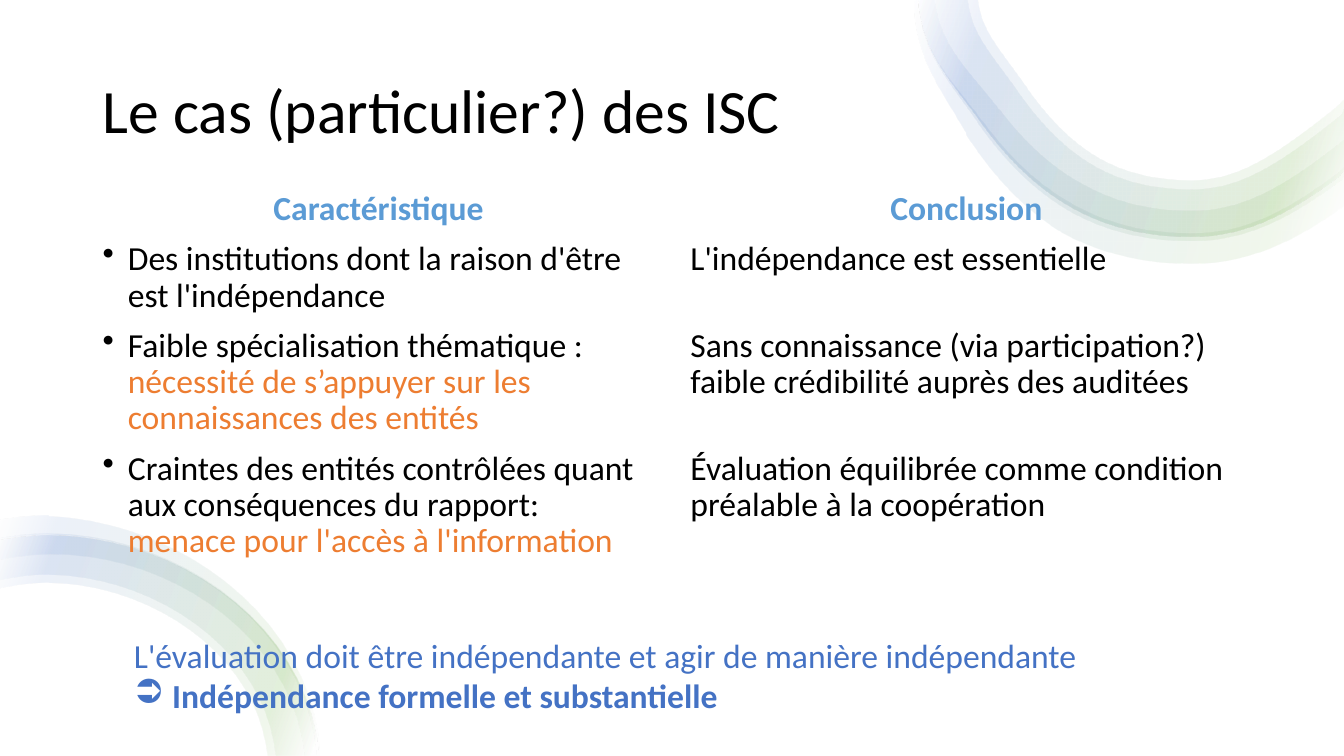
"""Build the slide on the particular case of the ISC, with two translucent ribbons."""
import math
import pptx
import pptx.util
import pptx.dml.color
import pptx.enum.text
import pptx.oxml
import pptx.oxml.ns
from dataclasses import dataclass

Inches = pptx.util.Inches
Pt = pptx.util.Pt
Align = pptx.enum.text.PP_ALIGN
Anchor = pptx.enum.text.MSO_ANCHOR


@dataclass(frozen=True)
class Theme:
    font: str = "Calibri"
    paper: str = "FFFFFF"
    ink: str = "000000"
    heading: str = "5B9BD5"
    accent: str = "ED7D31"
    message: str = "4472C4"
    ribbon: tuple = ((2, "FFFFFF"), (16, "70AD47"), (85, "4472C4"), (100, "FFFFFF"))
    ribbon_opacity: int = 10
    ribbon_angle: int = 200
    title_size: int = 44
    text_size: int = 24


theme = Theme()
width, height = 13.33, 7.5
deck = pptx.Presentation()
deck.slide_width, deck.slide_height = Inches(width), Inches(height)
slide = deck.slides.add_slide(deck.slide_layouts[6])
slide.background.fill.solid()
slide.background.fill.fore_color.rgb = pptx.dml.color.RGBColor.from_string(theme.paper)


def add_ribbon(start, curves, outer, inner, samples=20):
    """Draw a band between two offsets of a Bézier chain, each easing from end to full value."""
    steps = []
    for curve in curves:
        knots = [start, curve[:2], curve[2:4], curve[4:]]
        for i in range(samples):
            t = i / (samples - 1)
            place = (((1 - t) ** 3, 3 * t * (1 - t) ** 2, 3 * t * t * (1 - t), t ** 3))
            slope = ((1 - t) ** 2, 2 * t * (1 - t), t * t)
            x, y = (sum(w * k[axis] for w, k in zip(place, knots)) for axis in (0, 1))
            dx, dy = (sum(w * (b[axis] - a[axis]) for w, a, b in zip(slope, knots, knots[1:]))
                      for axis in (0, 1))
            steps.append((x, y, dx / math.hypot(dx, dy), dy / math.hypot(dx, dy)))
        start = knots[-1]
    edges = []
    for first, full in (outer, inner):
        edge = []
        for index, (x, y, dx, dy) in enumerate(steps):
            offset = first + (full - first) * min(1, 2 * index / len(steps))
            edge.append((Inches(min(max(x + dy * offset, 0), width)),
                         Inches(min(max(y - dx * offset, 0), height))))
        edges.append(edge)
    points = edges[0] + edges[1][::-1]
    outline = slide.shapes.build_freeform(*points[0])
    outline.add_line_segments(points[1:], close=True)
    band = outline.convert_to_shape()
    band.shadow.inherit = False
    band.line.fill.background()
    band.fill.background()
    stops = "".join(
        f'<a:gs pos="{place * 1000}"><a:srgbClr val="{color}">'
        f'<a:alpha val="{theme.ribbon_opacity * 1000}"/></a:srgbClr></a:gs>'
        for place, color in theme.ribbon)
    gradient = pptx.oxml.parse_xml(
        f'<a:gradFill {pptx.oxml.ns.nsdecls("a")} rotWithShape="1"><a:gsLst>{stops}</a:gsLst>'
        f'<a:lin ang="{theme.ribbon_angle * 60000}" scaled="0"/></a:gradFill>')
    blank = band.element.spPr.find(pptx.oxml.ns.qn("a:noFill"))
    band.element.spPr.replace(blank, gradient)


def add_text(box, paragraphs, size=theme.text_size, anchor=Anchor.TOP, line=0.9, before=10):
    """Add a text box; each paragraph is (runs, options), each run (text, colour, bold)."""
    frame = slide.shapes.add_textbox(*(Inches(v) for v in box)).text_frame
    frame.word_wrap = True
    frame.vertical_anchor = anchor
    for index, (runs, options) in enumerate(paragraphs):
        paragraph = frame.paragraphs[0] if index == 0 else frame.add_paragraph()
        paragraph.alignment = options.get("align", Align.LEFT)
        paragraph.line_spacing = line
        paragraph.space_before = Pt(before)
        paragraph.space_after = Pt(options.get("after", 0))
        if "bullet" in options:
            properties = paragraph._p.get_or_add_pPr()
            indent = Inches(options["indent"])
            properties.set("marL", str(indent))
            properties.set("indent", str(-indent))
            properties.append(pptx.oxml.parse_xml(
                f'<a:buChar {pptx.oxml.ns.nsdecls("a")} char="{options["bullet"]}"/>'))
        for text, color, bold in runs:
            if text == "\n":
                paragraph.add_line_break()
                continue
            run = paragraph.add_run()
            run.text = text
            run.font.name, run.font.size, run.font.bold = theme.font, Pt(size), bold
            run.font.color.rgb = pptx.dml.color.RGBColor.from_string(color)


top_sweep = ((9.11, 0), [(9.15, 0.55, 9.45, 0.82, 9.73, 1.22),
                         (10.23, 1.91, 10.85, 2.35, 11.81, 2.35),
                         (12.5, 2.35, 13, 1.98, 13.7, 1.42)])
bottom_sweep = ((3.16, 7.5), [(3.05, 6.2, 1.75, 5.31, 0.49, 5.31),
                              (0.2, 5.31, -0.1, 5.37, -0.4, 5.45)])
ribbons = [
    (top_sweep, (-0.04, -0.26), (-0.01, 0.04)),
    (top_sweep, (0, -0.04), (0.16, 0.26)),
    (top_sweep, (0, 0), (0.49, 0.47)),
    (top_sweep, (0, 0), (0.59, 0.56)),
    (bottom_sweep, (0, 0), (0.51, 0.47)),
    (bottom_sweep, (0, 0), (0.43, 0.39)),
    (bottom_sweep, (0, -0.02), (0.14, 0.19)),
    (bottom_sweep, (-0.01, -0.19), (0.02, 0)),
]
for sweep, outer_offset, inner_offset in ribbons:
    add_ribbon(*sweep, outer_offset, inner_offset)

centred = {"align": Align.CENTER}
bulleted = {"bullet": "•", "indent": 0.25}
row_gap = {"after": 26}

add_text((0.92, 0.4, 11.5, 1.45), [([("Le cas (particulier?) des ISC", theme.ink, False)], {})],
         size=theme.title_size, anchor=Anchor.MIDDLE, before=0)

add_text((0.92, 1.85, 5.67, 4.43), [
    ([("Caractéristique", theme.heading, True)], centred),
    ([("Des institutions dont la raison d'être est l'indépendance", theme.ink, False)], bulleted),
    ([("Faible spécialisation thématique : ", theme.ink, False),
      ("nécessité de s’appuyer sur les connaissances des entités", theme.accent, False)], bulleted),
    ([("Craintes des entités contrôlées quant aux conséquences du rapport:", theme.ink, False),
      ("\n", theme.ink, False),
      ("menace pour l'accès à l'information", theme.accent, False)], bulleted),
])

add_text((6.75, 1.85, 5.67, 4.1), [
    ([("Conclusion", theme.heading, True)], centred),
    ([("L'indépendance est essentielle", theme.ink, False)], row_gap),
    ([("Sans connaissance (via participation?) faible crédibilité auprès des auditées",
       theme.ink, False)], row_gap),
    ([("Évaluation équilibrée comme condition préalable à la coopération", theme.ink, False)], {}),
])

add_text((1.23, 6.25, 10.45, 0.91), [
    ([("L'évaluation doit être indépendante et agir de manière indépendante",
       theme.message, False)], {}),
    ([("Indépendance formelle et substantielle", theme.message, True)],
     {"bullet": "➲", "indent": 0.38}),
], line=1.0, before=0)

deck.save("out.pptx")
